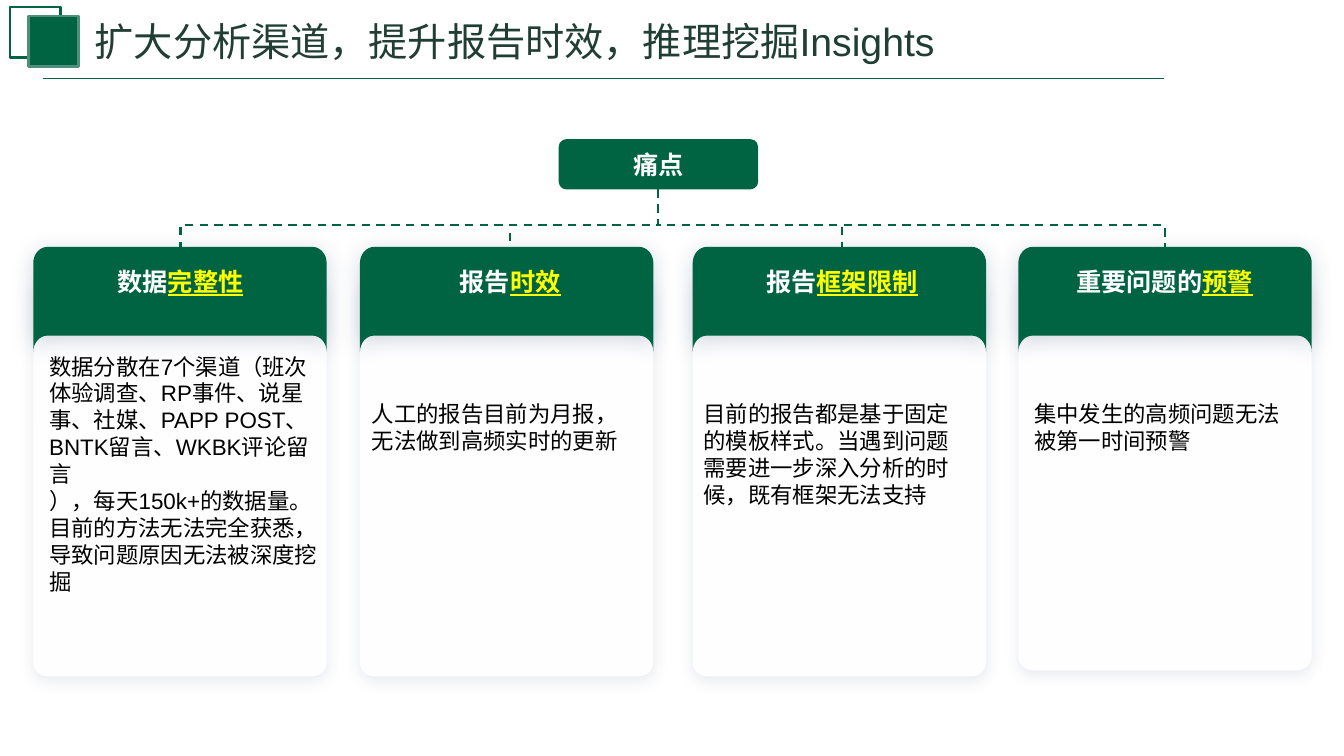
from dataclasses import dataclass

from lxml.etree import SubElement
from pptx import Presentation
from pptx.dml.color import RGBColor
from pptx.enum.dml import MSO_LINE
from pptx.enum.shapes import MSO_CONNECTOR, MSO_SHAPE
from pptx.enum.text import MSO_ANCHOR, MSO_AUTO_SIZE, PP_ALIGN
from pptx.oxml.ns import qn
from pptx.util import Inches, Pt


@dataclass(frozen=True)
class Theme:
    font: str = "Arial"
    green: str = "006341"
    rim: str = "4F8E7A"
    ink: str = "203E34"
    black: str = "000000"
    white: str = "FFFFFF"
    panel: str = "FEFEFF"
    mark: str = "FFFF00"
    shade: str = "203864"
    title: int = 28
    head: int = 18
    body: int = 16


@dataclass(frozen=True)
class Card:
    left: float
    mid: float
    high: float
    lead: str
    mark: str
    text: tuple[str, ...]
    text_x: float
    text_y: float = 3.92
    text_w: float = 2.84
    text_h: float = 0.64


THEME = Theme()
WIDE = 2.91
TAB_TOP = 2.45
TAB_HIGH = 0.88
ROOT_X, ROOT_Y = 6.53, 1.88
DROP = 0.71

CARDS = (
    Card(0.33, 1.79, 3.95, "数据", "完整性",
         ("数据分散在7个渠道（班次体验调查、RP事件、说星事、社媒、PAPP POST、BNTK留言、WKBK评论留言",
          "），每天150k+的数据量。目前的方法无法完全获悉，导致问题原因无法被深度挖掘"),
         0.39, 3.45, 2.9, 2.52),
    Card(3.57, 5.06, 3.95, "报告", "时效",
         ("人工的报告目前为月报，无法做到高频实时的更新",), 3.59),
    Card(6.87, 8.35, 3.95, "报告", "框架限制",
         ("目前的报告都是基于固定的模板样式。当遇到问题需要进一步深入分析的时候，既有框架无法支持",),
         6.88, text_h=1.18),
    Card(10.1, 11.55, 3.89, "重要问题的", "预警",
         ("集中发生的高频问题无法被第一时间预警",), 10.16),
)


def paint(shape, fill: str | None, line: str | None = None) -> None:
    shape.shadow.inherit = False
    if fill:
        shape.fill.solid()
        shape.fill.fore_color.rgb = RGBColor.from_string(fill)
    else:
        shape.fill.background()
    if line:
        shape.line.color.rgb = RGBColor.from_string(line)
        shape.line.width = Pt(2)
    else:
        shape.line.fill.background()


def add_shade(shape, alpha: int, blur: int) -> None:
    """Cast a soft shadow straight down."""
    glow = shape._element.spPr.find(qn("a:effectLst"))
    cast = SubElement(glow, qn("a:outerShdw"), blurRad=str(Pt(blur)),
                      dist=str(Pt(3)), dir="5400000", algn="t", rotWithShape="0")
    tint = SubElement(cast, qn("a:srgbClr"), val=THEME.shade)
    SubElement(tint, qn("a:alpha"), val=str(alpha * 1000))


def set_font(para, size: int, color: str, bold: bool = False) -> None:
    font = para.font
    font.name, font.size, font.bold = THEME.font, Pt(size), bold
    font.color.rgb = RGBColor.from_string(color)


def add_block(slide, kind, left: float, top: float, wide: float, high: float):
    return slide.shapes.add_shape(
        kind, Inches(left), Inches(top), Inches(wide), Inches(high))


def add_text(slide, left: float, top: float, wide: float, high: float):
    box = slide.shapes.add_textbox(
        Inches(left), Inches(top), Inches(wide), Inches(high))
    box.text_frame.word_wrap = True
    box.text_frame.auto_size = MSO_AUTO_SIZE.SHAPE_TO_FIT_TEXT
    return box.text_frame


def add_tab(slide, left: float):
    """Draw a card head: four straight edges, each ending in a curve."""
    rx, ry, bend = 0.14, 0.16, 0.45
    right, base = left + WIDE, TAB_TOP + TAB_HIGH

    def curve(side: float, turn: int, top: float) -> list[tuple[float, float]]:
        """List the bezier points from the flat edge out to the side."""
        return [(side - turn * rx, top), (side - turn * rx * bend, top),
                (side, top + ry * bend), (side, top + ry)]

    path = (curve(right, 1, TAB_TOP) + curve(right, 1, base)[::-1]
            + curve(left, -1, base) + curve(left, -1, TAB_TOP)[::-1])
    spots = [(Inches(x), Inches(y)) for x, y in path]
    form = slide.shapes.build_freeform(*spots[-1])
    form.add_line_segments(spots, close=True)
    tab = form.convert_to_shape()
    steps = list(tab._element.spPr.iter(qn("a:lnTo")))
    for i in range(0, len(path), 4):
        arc = steps[i + 1]
        arc.tag = qn("a:cubicBezTo")
        for step in steps[i + 2:i + 4]:
            arc.append(step[0])
            step.getparent().remove(step)
    return tab


def add_card(slide, card: Card) -> None:
    panel = add_block(slide, MSO_SHAPE.ROUNDED_RECTANGLE,
                      card.left, 2.76, WIDE, card.high)
    panel.adjustments[0] = 0.048
    paint(panel, THEME.panel)
    add_shade(panel, 10, 10)

    tab = add_tab(slide, card.left)
    paint(tab, THEME.green)
    add_shade(tab, 20, 16)

    para = add_text(slide, card.mid - WIDE / 2, 2.59, WIDE, 0.4).paragraphs[0]
    para.alignment = PP_ALIGN.CENTER
    set_font(para, THEME.head, THEME.white, True)
    para.add_run().text = card.lead
    run = para.add_run()
    run.text = card.mark
    run.font.underline = True
    run.font.color.rgb = RGBColor.from_string(THEME.mark)

    frame = add_text(slide, card.text_x, card.text_y, card.text_w, card.text_h)
    frame.text = "\n".join(card.text)
    for para in frame.paragraphs:
        set_font(para, THEME.body, THEME.black)


def style_line(line, width: float) -> None:
    line.line.color.rgb = RGBColor.from_string(THEME.green)
    line.line.width = Pt(width)
    SubElement(line._element.spPr, qn("a:effectLst"))


def add_branch(slide, mid: float) -> None:
    """Link the root to a card by an elbow turned to leave downwards."""
    run = abs(mid - ROOT_X)
    left = (mid + ROOT_X - DROP) / 2
    top = ROOT_Y + (DROP - run) / 2
    ends, turn = (left, left + DROP), 90
    if mid > ROOT_X:
        ends, turn = ends[::-1], 270
    link = slide.shapes.add_connector(
        MSO_CONNECTOR.ELBOW, Inches(ends[0]), Inches(top),
        Inches(ends[1]), Inches(top + run))
    link._element.spPr.find(qn("a:xfrm")).set("rot", str(turn * 60000))
    style_line(link, 1.5)
    link.line.dash_style = MSO_LINE.DASH
    SubElement(link.line._get_or_add_ln(), qn("a:tailEnd"), type="triangle")


def add_title(slide) -> None:
    title = slide.shapes.title
    title.left, title.top = Inches(0.84), Inches(0.12)
    title.width, title.height = Inches(10.46), Inches(0.57)
    frame = title.text_frame
    frame.text = "扩大分析渠道，提升报告时效，推理挖掘Insights"
    frame.vertical_anchor = MSO_ANCHOR.TOP
    frame.auto_size = MSO_AUTO_SIZE.SHAPE_TO_FIT_TEXT
    para = frame.paragraphs[0]
    para.alignment = PP_ALIGN.LEFT
    set_font(para, THEME.title, THEME.ink)

    rule = slide.shapes.add_connector(
        MSO_CONNECTOR.STRAIGHT, Inches(0.43), Inches(0.78),
        Inches(11.54), Inches(0.78))
    style_line(rule, 1.25)
    paint(add_block(slide, MSO_SHAPE.RECTANGLE, 0.1, 0.07, 0.5, 0.5),
          None, THEME.green)
    paint(add_block(slide, MSO_SHAPE.RECTANGLE, 0.28, 0.16, 0.5, 0.5),
          THEME.green, THEME.rim)


def add_root(slide) -> None:
    root = add_block(slide, MSO_SHAPE.ROUNDED_RECTANGLE, 5.54, 1.38, 1.98, 0.5)
    root.adjustments[0] = 0.16
    paint(root, THEME.green)
    root.text_frame.text = "痛点"
    root.text_frame.vertical_anchor = MSO_ANCHOR.MIDDLE
    para = root.text_frame.paragraphs[0]
    para.alignment = PP_ALIGN.CENTER
    set_font(para, THEME.head, THEME.white, True)


def main() -> None:
    deck = Presentation()
    deck.slide_width, deck.slide_height = Inches(13.33), Inches(7.5)
    slide = deck.slides.add_slide(deck.slide_layouts[5])
    add_title(slide)
    for card in CARDS:
        add_card(slide, card)
    add_root(slide)
    for card in CARDS:
        add_branch(slide, card.mid)
    deck.save("out.pptx")


if __name__ == "__main__":
    main()
